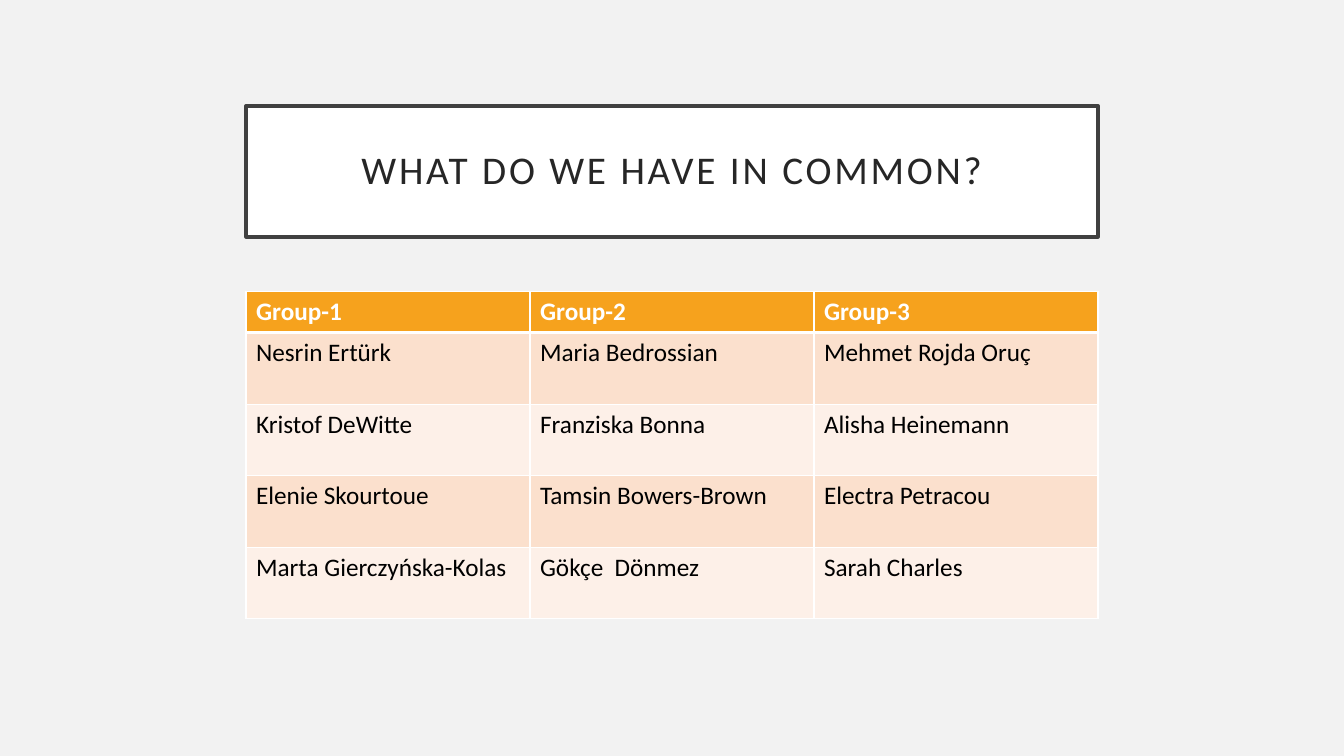
from dataclasses import dataclass

from lxml import etree
from pptx import Presentation
from pptx import util as u
from pptx.dml.color import RGBColor
from pptx.enum import text
from pptx.oxml.ns import qn


@dataclass(frozen=True)
class Theme:
    font: str = "Calibri"
    title_size: float = 28
    table_size: float = 18
    title_spacing: float = 2
    background: str = "F2F2F2"
    white: str = "FFFFFF"
    frame: str = "404040"
    title_ink: str = "262626"
    names_ink: str = "000000"
    header: str = "F6A21D"
    bands: tuple = ("FBE0CD", "FDF0E8")


THEME = Theme()
WIDTH, HEIGHT = u.Inches(13.33), u.Inches(7.5)
LEFT, SPAN = u.Inches(2.44), u.Inches(8.45)
TITLE_TOP, TITLE_HEIGHT = u.Inches(1.05), u.Inches(1.3)
TABLE_TOP = u.Inches(2.89)
HEADER_HEIGHT, NAME_HEIGHT = u.Inches(0.41), u.Inches(0.71)

GROUPS = {
    "Group-1": ["Nesrin Ertürk", "Kristof DeWitte", "Elenie Skourtoue",
                "Marta Gierczyńska-Kolas"],
    "Group-2": ["Maria Bedrossian", "Franziska Bonna", "Tamsin Bowers-Brown",
                "Gökçe  Dönmez"],
    "Group-3": ["Mehmet Rojda Oruç", "Alisha Heinemann", "Electra Petracou",
                "Sarah Charles"],
}


def paint(fill, color):
    fill.solid()
    fill.fore_color.rgb = RGBColor.from_string(color)


def style_run(run, size, color, bold=False):
    run.font.name = THEME.font
    run.font.size = u.Pt(size)
    run.font.bold = bold
    run.font.color.rgb = RGBColor.from_string(color)


def add_title(slide, wording):
    title = slide.shapes.title
    title.left, title.top, title.width, title.height = (
        LEFT, TITLE_TOP, SPAN, TITLE_HEIGHT)
    paint(title.fill, THEME.white)
    paint(title.line.fill, THEME.frame)
    title.line.width = u.Pt(2.5)

    frame = title.text_frame
    frame.text = wording
    frame.word_wrap = True
    frame.auto_size = text.MSO_AUTO_SIZE.NONE
    frame.vertical_anchor = text.MSO_ANCHOR.MIDDLE
    frame.margin_left = frame.margin_right = u.Inches(0.2)
    frame.margin_top = frame.margin_bottom = u.Inches(0.2)
    heading = frame.paragraphs[0]
    heading.alignment = text.PP_ALIGN.CENTER
    heading.line_spacing = 0.9
    run = heading.runs[0]
    style_run(run, THEME.title_size, THEME.title_ink)
    run.font._element.set("spc", str(THEME.title_spacing * 100))


def add_borders(cell, bottom, top):
    """Draw white cell borders; top and bottom are widths in points."""
    properties = cell._tc.get_or_add_tcPr()
    for side, width in (("L", 1), ("R", 1), ("T", top), ("B", bottom)):
        line = etree.SubElement(properties, qn(f"a:ln{side}"),
                                w=str(u.Pt(width)))
        fill = etree.SubElement(line, qn("a:solidFill"))
        etree.SubElement(fill, qn("a:srgbClr"), val=THEME.white)


def fill_cell(cell, wording, row):
    is_header = row == 0
    add_borders(cell, bottom=3 if is_header else 1, top=3 if row == 1 else 1)
    paint(cell.fill, THEME.header if is_header else THEME.bands[(row - 1) % 2])
    cell.text_frame.text = wording
    style_run(cell.text_frame.paragraphs[0].runs[0], THEME.table_size,
              THEME.white if is_header else THEME.names_ink, is_header)


def add_groups(slide, groups):
    columns = [[group, *members] for group, members in groups.items()]
    row_count = len(columns[0])
    height = HEADER_HEIGHT + NAME_HEIGHT * (row_count - 1)
    table = slide.shapes.add_table(
        row_count, len(columns), LEFT, TABLE_TOP, SPAN, height).table
    for index, row in enumerate(table.rows):
        row.height = NAME_HEIGHT if index else HEADER_HEIGHT
    for column, entries in enumerate(columns):
        for row, wording in enumerate(entries):
            fill_cell(table.cell(row, column), wording, row)


def main():
    deck = Presentation()
    deck.slide_width, deck.slide_height = WIDTH, HEIGHT
    slide = deck.slides.add_slide(deck.slide_layouts.get_by_name("Title Only"))
    paint(slide.background.fill, THEME.background)
    add_title(slide, "WHAT DO WE HAVE IN COMMON?")
    add_groups(slide, GROUPS)
    deck.save("out.pptx")


if __name__ == "__main__":
    main()
